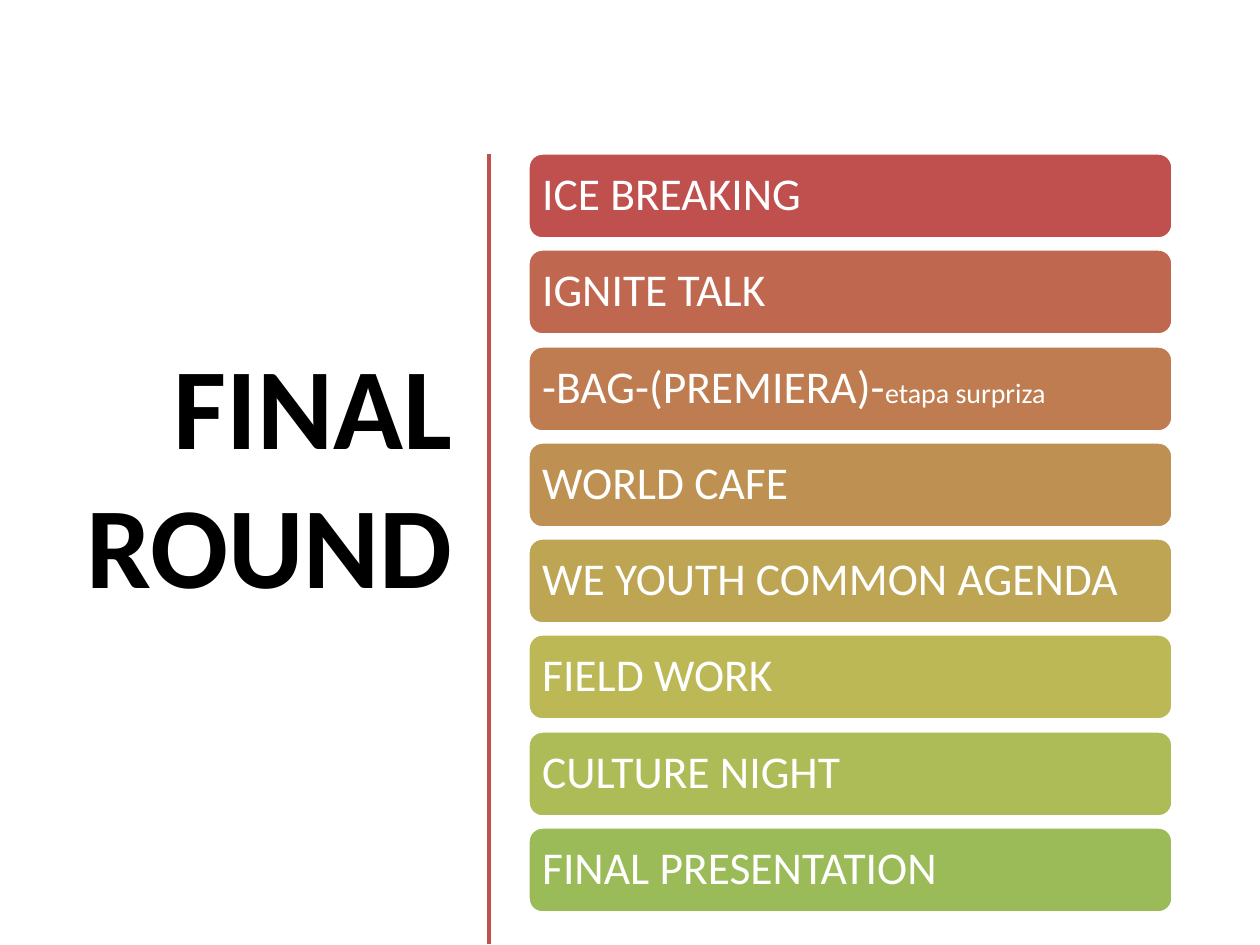
from dataclasses import dataclass

from lxml.etree import SubElement
from pptx import Presentation
from pptx.dml.color import RGBColor
from pptx.enum.shapes import MSO_CONNECTOR, MSO_SHAPE
from pptx.enum.text import MSO_ANCHOR, PP_ALIGN
from pptx.oxml.ns import qn
from pptx.util import Pt

EMU_PER_PX = 914400 // 126


@dataclass(frozen=True)
class Theme:
    font: str = "Calibri"
    title_color: str = "000000"
    light: str = "FFFFFF"
    divider: str = "C0504D"
    title_size: int = 66
    stage_size: int = 26
    note_size: int = 16
    line_width: int = 2


THEME = Theme()

# Stage name, small note after it, bar colour
STAGES = [
    ("ICE BREAKING", "", "C0504D"),
    ("IGNITE TALK", "", "BF674F"),
    ("-BAG-(PREMIERA)-", "etapa surpriza", "BF7C50"),
    ("WORLD CAFE", "", "BE9152"),
    ("WE YOUTH COMMON AGENDA", "", "BDA554"),
    ("FIELD WORK", "", "BCB856"),
    ("CULTURE NIGHT", "", "AEBC57"),
    ("FINAL PRESENTATION", "", "9BBB59"),
]
BAR_LEFT, BAR_WIDTH, BAR_HEIGHT = 528, 645, 86
FIRST_TOP, LAST_TOP = 153, 827


def px(n):
    return n * EMU_PER_PX


def rgb(color):
    return RGBColor.from_string(color)


def style_font(font, size, color, bold=False):
    font.name = THEME.font
    font.size = Pt(size)
    font.bold = bold
    font.color.rgb = rgb(color)


def add_title(slide, text, left, top, width, height):
    tf = slide.shapes.add_textbox(px(left), px(top), px(width), px(height)).text_frame
    tf.word_wrap = True
    tf.vertical_anchor = MSO_ANCHOR.MIDDLE
    p = tf.paragraphs[0]
    p.text = text
    p.alignment = PP_ALIGN.RIGHT
    style_font(p.font, THEME.title_size, THEME.title_color, bold=True)


def add_divider(slide, x, top, bottom):
    line = slide.shapes.add_connector(
        MSO_CONNECTOR.STRAIGHT, px(x), px(top), px(x), px(bottom))
    line.line.color.rgb = rgb(THEME.divider)
    line.line.width = Pt(THEME.line_width)
    SubElement(line._element.spPr, qn("a:effectLst"))


def add_stage(slide, top, name, note, color):
    sp = slide.shapes.add_shape(
        MSO_SHAPE.ROUNDED_RECTANGLE,
        px(BAR_LEFT), px(top), px(BAR_WIDTH), px(BAR_HEIGHT))
    sp.shadow.inherit = False
    sp.fill.solid()
    sp.fill.fore_color.rgb = rgb(color)
    sp.line.color.rgb = rgb(THEME.light)
    sp.line.width = Pt(THEME.line_width)

    tf = sp.text_frame
    tf.word_wrap = True
    tf.vertical_anchor = MSO_ANCHOR.MIDDLE
    tf.margin_left = tf.margin_right = tf.margin_top = tf.margin_bottom = px(10)
    p = tf.paragraphs[0]
    p.alignment = PP_ALIGN.LEFT
    p.line_spacing = 0.9
    style_font(p.font, THEME.stage_size, THEME.light)
    p.add_run().text = name
    if note:
        r = p.add_run()
        r.text = note
        r.font.size = Pt(THEME.note_size)


def main():
    prs = Presentation()
    prs.slide_width, prs.slide_height = px(1260), px(945)
    slide = prs.slides.add_slide(prs.slide_layouts[6])

    # Heading and divider
    add_title(slide, "FINAL ROUND", 58, 88, 407, 770)
    add_divider(slide, 489, 154, 944)

    # Stages, evenly spaced from first to last
    pitch = (LAST_TOP - FIRST_TOP) / (len(STAGES) - 1)
    for i, stage in enumerate(STAGES):
        add_stage(slide, round(FIRST_TOP + i * pitch), *stage)

    prs.save("out.pptx")


if __name__ == "__main__":
    main()
